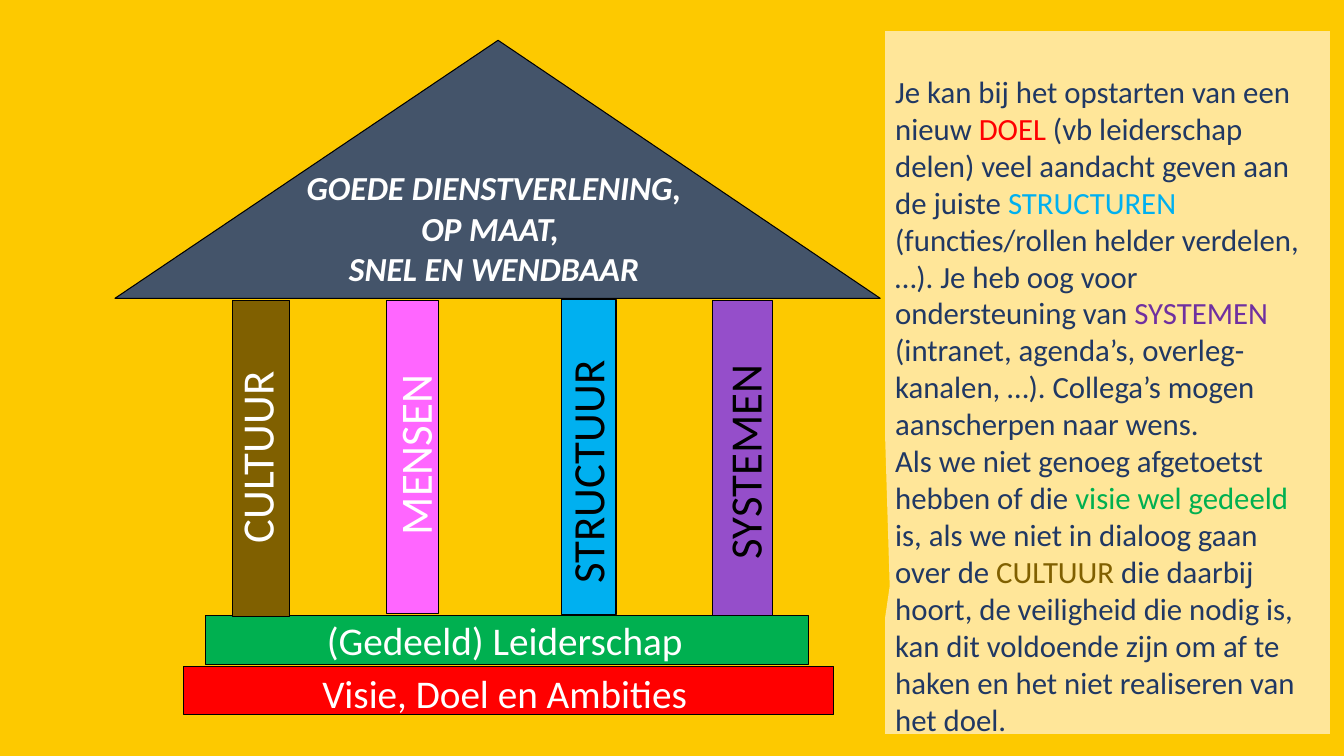
from pptx import Presentation
from pptx.dml.color import RGBColor
from pptx.enum.shapes import MSO_SHAPE
from pptx.enum.text import MSO_ANCHOR, PP_ALIGN
from pptx.util import Inches, Pt

NAVY, WHITE, BLACK = "203864", "FFFFFF", "000000"
RED, GREEN, BLUE, BROWN = "FF0000", "00B050", "00B0F0", "806000"

STEPS = [
    ((1.82, 6.61, 6.45, 0.48), RED, "Visie, Doel en Ambities", (2.9, 6.64, 4.21, 0.47)),
    ((2.04, 6.11, 5.98, 0.48), GREEN, "(Gedeeld) Leiderschap", (2.42, 6.11, 5.17, 0.47)),
]
ROOF = [(4.94, 0.4), (1.14, 2.96), (8.73, 2.96)]
ROOF_LINES = ["GOEDE DIENSTVERLENING,", "OP MAAT, ", "SNEL EN WENDBAAR"]
PILLARS = [
    ("STRUCTUUR", (5.57, 2.97, 0.54, 3.13), BLUE, BLACK, (5.82, 4.64), 2.3),
    ("SYSTEMEN", (7.07, 2.98, 0.59, 3.13), "954ECA", BLACK, (7.38, 4.33), 2.44),
    ("MENSEN", (3.83, 2.98, 0.52, 3.11), "FF66FF", WHITE, (4.11, 4.28), 2.06),
    ("CULTUUR", (2.31, 2.98, 0.56, 3.14), BROWN, WHITE, (2.54, 4.41), 1.96),
]
LABEL_HEIGHT = 0.54
CALLOUT = [
    [
        ("Je kan bij het opstarten van een nieuw ", NAVY),
        ("DOEL", RED),
        (" (vb leiderschap delen) veel aandacht geven aan de juiste ", NAVY),
        ("STRUCTUREN", BLUE),
        (" (functies/rollen helder verdelen, …). Je heb oog voor ondersteuning van ", NAVY),
        ("SYSTEMEN ", "7030A0"),
        ("(intranet, agenda’s, overleg-kanalen, …). Collega’s mogen aanscherpen naar wens.", NAVY),
    ],
    [
        ("Als we niet genoeg afgetoetst hebben of die ", NAVY),
        ("visie wel gedeeld ", GREEN),
        ("is, als we niet in dialoog gaan over de ", NAVY),
        ("CULTUUR ", BROWN),
        ("die daarbij hoort, de veiligheid die nodig is, kan dit voldoende zijn om af te "
         "haken en het niet realiseren van het doel.", NAVY),
    ],
]


def rgb(value):
    return RGBColor.from_string(value)


def paint(shape, fill, line=BLACK):
    shape.shadow.inherit = False
    shape.fill.solid()
    shape.fill.fore_color.rgb = rgb(fill)
    if line:
        shape.line.color.rgb = rgb(line)
        shape.line.width = Pt(0.75)
    else:
        shape.line.fill.background()
    return shape


def add_block(s, box, fill, line=BLACK, kind=MSO_SHAPE.RECTANGLE):
    return paint(s.shapes.add_shape(kind, *map(Inches, box)), fill, line)


def write(tf, paragraphs, align, insets=(0, 0, 0, 0), **font):
    left, top, right, bottom = map(Inches, insets)
    frame = dict(word_wrap=True, vertical_anchor=MSO_ANCHOR.TOP, margin_left=left,
                 margin_top=top, margin_right=right, margin_bottom=bottom)
    for name, value in frame.items():
        setattr(tf, name, value)
    for i, runs in enumerate(paragraphs):
        p = tf.add_paragraph() if i else tf.paragraphs[0]
        p.alignment = align
        for text, color in runs:
            r = p.add_run()
            r.text = text
            r.font.color.rgb = rgb(color)
            for name, value in dict(name="Calibri", **font).items():
                setattr(r.font, name, value)


def add_label(s, box, lines, color, align=PP_ALIGN.CENTER, **font):
    sp = s.shapes.add_textbox(*map(Inches, box))
    write(sp.text_frame, [[(line, color)] for line in lines], align, **font)
    return sp


def main():
    prs = Presentation()
    prs.slide_width, prs.slide_height = Inches(13.33), Inches(7.5)
    s = prs.slides.add_slide(prs.slide_layouts[6])
    s.background.fill.solid()
    s.background.fill.fore_color.rgb = rgb("FDC900")

    for box, fill, text, label_box in STEPS:
        add_block(s, box, fill)
        add_label(s, label_box, [text], WHITE, size=Pt(28))

    apex, *base = [(Inches(x), Inches(y)) for x, y in ROOF]
    builder = s.shapes.build_freeform(*apex)
    builder.add_line_segments(base, close=True)
    paint(builder.convert_to_shape(), "44546A")
    add_label(s, (3.02, 1.66, 3.76, 1.51), ROOF_LINES, WHITE,
              size=Pt(24), bold=True, italic=True)

    for text, box, fill, color, (cx, cy), length in PILLARS:
        add_block(s, box, fill)
        label_box = (cx - length / 2, cy - LABEL_HEIGHT / 2, length, LABEL_HEIGHT)
        add_label(s, label_box, [text], color, PP_ALIGN.LEFT, size=Pt(32)).rotation = 270

    sp = add_block(s, (8.78, 0.31, 4.41, 6.97), "FFE699", None,
                   MSO_SHAPE.RECTANGULAR_CALLOUT)
    sp.adjustments[0], sp.adjustments[1] = -0.49, 0.29
    write(sp.text_frame, CALLOUT, PP_ALIGN.LEFT, (0.1, 0.41, 0.1, 0), size=Pt(22))

    prs.save("out.pptx")


if __name__ == "__main__":
    main()
